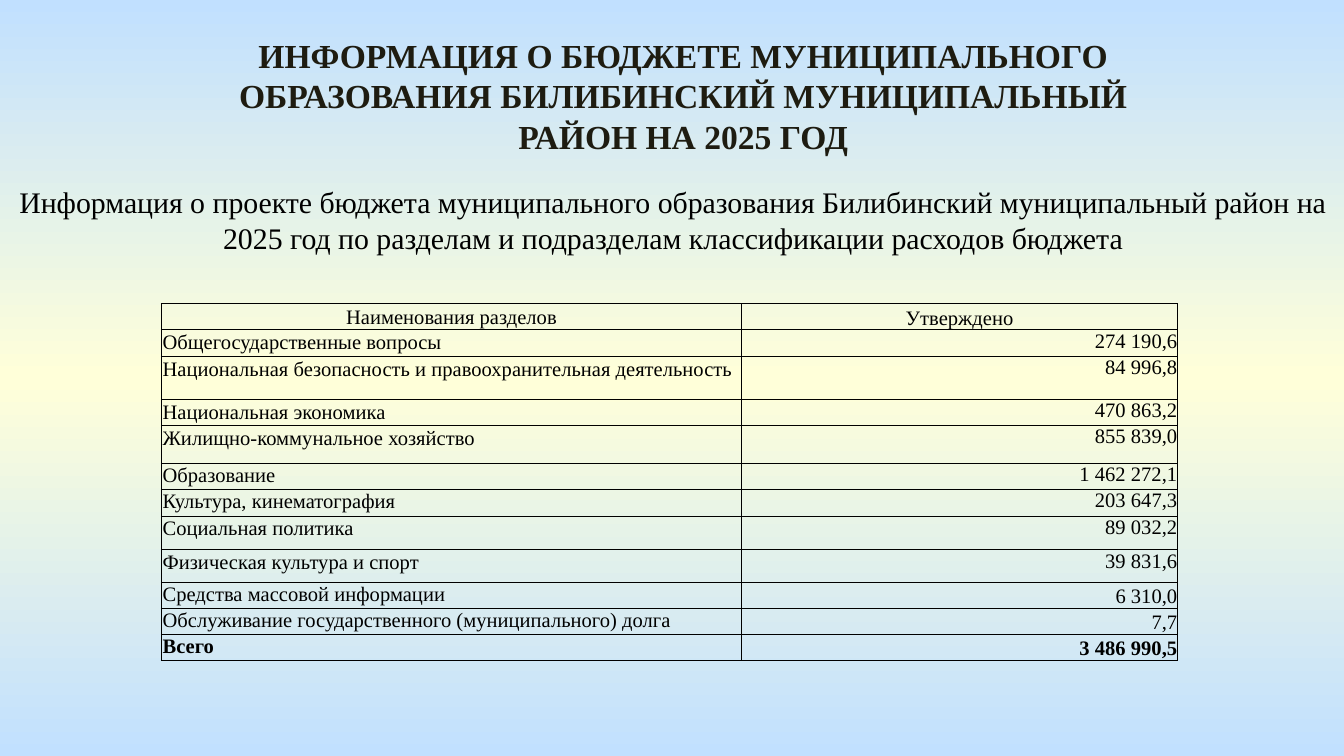
from copy import deepcopy

from lxml import etree
from pptx import Presentation
from pptx import util as u
from pptx.dml.color import RGBColor
from pptx.enum import text
from pptx.oxml.ns import qn

FONT = "Times New Roman"
BLACK = "000000"
BLUE = "C1E0FF"
YELLOW = "FFFFD9"
TITLE = ("ИНФОРМАЦИЯ О БЮДЖЕТЕ МУНИЦИПАЛЬНОГО ОБРАЗОВАНИЯ "
         "БИЛИБИНСКИЙ МУНИЦИПАЛЬНЫЙ РАЙОН НА 2025 ГОД")
SUBTITLE = ("Информация о проекте бюджета муниципального образования "
            "Билибинский муниципальный район на 2025 год по разделам и "
            "подразделам классификации расходов бюджета")
HEADER = ("Наименования разделов", "Утверждено", 0.19)
SECTIONS = [
    ("Общегосударственные вопросы", "274 190,6", 0.2),
    ("Национальная безопасность и правоохранительная деятельность", "84 996,8", 0.32),
    ("Национальная экономика", "470 863,2", 0.19),
    ("Жилищно-коммунальное хозяйство", "855 839,0", 0.28),
    ("Образование", "1 462 272,1", 0.19),
    ("Культура, кинематография", "203 647,3", 0.2),
    ("Социальная политика", "89 032,2", 0.25),
    ("Физическая культура и спорт", "39 831,6", 0.24),
    ("Средства массовой информации", "6 310,0", 0.19),
    ("Обслуживание государственного (муниципального) долга", "7,7", 0.19),
]
TOTAL = ("Всего", "3 486 990,5", 0.19)
FIRST_BOTTOM_ROW = 9
LEFT, CENTER, RIGHT = text.PP_ALIGN.LEFT, text.PP_ALIGN.CENTER, text.PP_ALIGN.RIGHT
TOP, MIDDLE, BOTTOM = text.MSO_ANCHOR.TOP, text.MSO_ANCHOR.MIDDLE, text.MSO_ANCHOR.BOTTOM


def color(value):
    return RGBColor.from_string(value)


def set_background(slide):
    fill = slide.background.fill
    fill.gradient()
    fill.gradient_angle = 90
    for stop in fill.gradient_stops:
        stop.color.rgb = color(BLUE)
    stops = slide._element.find(".//" + qn("a:gsLst"))
    stops.insert(1, deepcopy(stops[0]))
    middle = fill.gradient_stops[1]
    middle.position = 0.5
    middle.color.rgb = color(YELLOW)


def write(frame, content, size, align, bold=False, font_color=BLACK):
    paragraph = frame.paragraphs[0]
    paragraph.alignment = align
    run = paragraph.add_run()
    run.text = content
    run.font.name = FONT
    run.font.size = u.Pt(size)
    run.font.bold = bold
    run.font.color.rgb = color(font_color)


def fit_frame(frame):
    frame.word_wrap = True
    frame.auto_size = text.MSO_AUTO_SIZE.SHAPE_TO_FIT_TEXT
    frame.vertical_anchor = TOP


def add_title(slide):
    title = slide.shapes.title
    title.left, title.top = u.Inches(1.22), u.Inches(0.21)
    title.width, title.height = u.Inches(7.73), u.Inches(1.01)
    fit_frame(title.text_frame)
    write(title.text_frame, TITLE, 18, CENTER, True, "1E1C11")


def add_subtitle(slide):
    box = slide.shapes.add_textbox(u.Inches(0.01), u.Inches(1.32), u.Inches(10), u.Inches(0.64))
    fit_frame(box.text_frame)
    write(box.text_frame, SUBTITLE, 16, CENTER)


def add_borders(cell):
    properties = cell._tc.get_or_add_tcPr()
    for index, side in enumerate(("lnL", "lnR", "lnT", "lnB")):
        line = etree.Element(qn("a:" + side), w=str(u.Pt(0.5)))
        fill = etree.SubElement(line, qn("a:solidFill"))
        etree.SubElement(fill, qn("a:srgbClr"), val=BLACK)
        properties.insert(index, line)


def format_cell(cell, content, align, anchor, inset, bold):
    cell.fill.background()
    cell.margin_left = cell.margin_right = cell.margin_top = u.Inches(inset)
    cell.margin_bottom = 0
    cell.vertical_anchor = anchor
    write(cell.text_frame, content, 11, align, bold)
    add_borders(cell)


def add_budget_table(slide):
    rows = [HEADER, *SECTIONS, TOTAL]
    height = sum(row[2] for row in rows)
    table = slide.shapes.add_table(len(rows), 2, u.Inches(1.2), u.Inches(2.26),
                                   u.Inches(7.56), u.Inches(height)).table
    table.first_row = table.horz_banding = False
    for column, width in zip(table.columns, (4.32, 3.24)):
        column.width = u.Inches(width)
    for index, (name, amount, row_height) in enumerate(rows):
        table.rows[index].height = u.Inches(row_height)
        header = index == 0
        bold = index == len(rows) - 1
        format_cell(table.cell(index, 0), name, CENTER if header else LEFT,
                    MIDDLE if header else TOP, 0.01, bold)
        at_bottom = header or index >= FIRST_BOTTOM_ROW
        format_cell(table.cell(index, 1), amount, CENTER if header else RIGHT,
                    BOTTOM if at_bottom else TOP, 0.01 if header else 0, bold)


def main():
    presentation = Presentation()
    presentation.slide_width = u.Inches(10)
    presentation.slide_height = presentation.slide_width * 9 // 16
    slide = presentation.slides.add_slide(presentation.slide_layouts[5])
    set_background(slide)
    add_title(slide)
    add_subtitle(slide)
    add_budget_table(slide)
    presentation.save("out.pptx")


if __name__ == "__main__":
    main()
